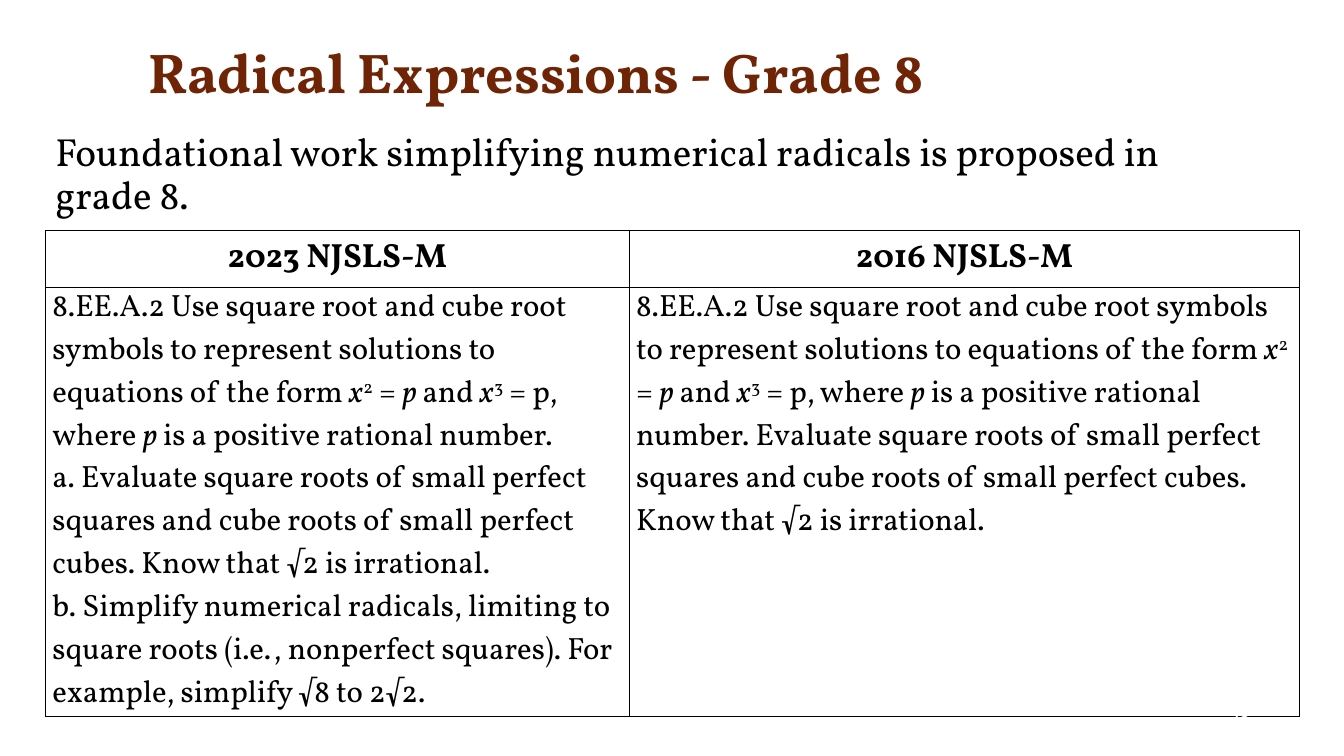
from lxml import etree
from pptx import Presentation
from pptx.dml.color import RGBColor
from pptx.enum.text import MSO_ANCHOR, PP_ALIGN
from pptx.oxml.ns import qn
from pptx.util import Inches, Pt

FONT = "Vollkorn"
BLACK, BROWN, WHITE = "000000", "6E2405", "FFFFFF"

TITLE = "Radical Expressions - Grade 8"
INTRO = "Foundational work simplifying numerical radicals is proposed in grade 8."
PAGE = "30"
HEADERS = ["2023 NJSLS-M", "2016 NJSLS-M"]

# Runs are (text, style): "" plain, "i" italic, "^" superscript
EQUATIONS = [
    ("8.EE.A.2 Use square root and cube root symbols to represent solutions"
     " to equations of the form ", ""),
    ("x", "i"), ("2", "^"), (" = ", ""), ("p", "i"), (" and ", ""),
    ("x", "i"), ("3", "^"), (" = p, where ", ""), ("p", "i"),
    (" is a positive rational number.", ""),
]
EVALUATE = ("Evaluate square roots of small perfect squares and cube roots of"
            " small perfect cubes. Know that √2 is irrational.")
SIMPLIFY = ("Simplify numerical radicals, limiting to square roots (i.e.,"
            " nonperfect squares). For example, simplify √8 to 2√2.")
STANDARDS = [
    [EQUATIONS, [("a. " + EVALUATE, "")], [("b. " + SIMPLIFY, "")]],
    [EQUATIONS + [(" " + EVALUATE, "")]],
]
COLUMNS = [5.79, 6.65]
ROWS = [0.56, 4.26]


def rgb(code):
    return RGBColor.from_string(code)


def set_frame(tf, margins, anchor):
    names = ("margin_left", "margin_top", "margin_right", "margin_bottom")
    for name, value in zip(names, margins):
        setattr(tf, name, Inches(value))
    tf.word_wrap = True
    tf.vertical_anchor = anchor


def add_runs(p, runs, size, color=BLACK, bold=False, **layout):
    for name, value in layout.items():
        setattr(p, name, value)
    for words, style in runs:
        r = p.add_run()
        r.text = words
        look = dict(name=FONT, size=Pt(size), bold=bold, italic=style == "i")
        for name, value in look.items():
            setattr(r.font, name, value)
        r.font.color.rgb = rgb(color)
        if style == "^":
            r.font._element.set("baseline", "30000")


def add_text(s, box, words, size, color, anchor=MSO_ANCHOR.MIDDLE,
             margins=(0.1, 0.05, 0.1, 0.05), **options):
    tf = s.shapes.add_textbox(*map(Inches, box)).text_frame
    set_frame(tf, margins, anchor)
    add_runs(tf.paragraphs[0], [(words, "")], size, color, **options)


def add_borders(cell):
    tc_pr = cell._tc.get_or_add_tcPr()
    for i, side in enumerate(("a:lnL", "a:lnR", "a:lnT", "a:lnB")):
        ln = etree.Element(qn(side), w=str(Pt(1)))
        fill = etree.SubElement(ln, qn("a:solidFill"))
        etree.SubElement(fill, qn("a:srgbClr"), val=BLACK)
        tc_pr.insert(i, ln)


def fill_cell(cell, paragraphs, size, anchor, **options):
    cell.fill.background()
    add_borders(cell)
    set_frame(cell.text_frame, (0, 0, 0, 0), anchor)
    cell.vertical_anchor = anchor
    cell.margin_left = cell.margin_right = Inches(0.07)
    cell.margin_top = cell.margin_bottom = 0
    tf = cell.text_frame
    for i, runs in enumerate(paragraphs):
        p = tf.add_paragraph() if i else tf.paragraphs[0]
        add_runs(p, runs, size, **options)


def main():
    prs = Presentation()
    prs.slide_width, prs.slide_height = Inches(13.33), Inches(7.5)
    s = prs.slides.add_slide(prs.slide_layouts[6])

    add_text(s, (1.37, 0.26, 11.96, 0.98), TITLE, 40, BROWN,
             bold=True, line_spacing=0.9)
    add_text(s, (0.45, 1.16, 12.26, 0.98), INTRO, 28, BLACK, MSO_ANCHOR.TOP,
             (0.1, 0.15, 0.3, 0.05), line_spacing=0.92)

    table = s.shapes.add_table(
        len(ROWS), len(COLUMNS), Inches(0.45), Inches(2.29),
        Inches(sum(COLUMNS)), Inches(sum(ROWS))).table
    for row, height in zip(table.rows, ROWS):
        row.height = Inches(height)
    for c, width in enumerate(COLUMNS):
        table.columns[c].width = Inches(width)
        fill_cell(table.cell(0, c), [[(HEADERS[c], "")]], 24,
                  MSO_ANCHOR.MIDDLE, bold=True, alignment=PP_ALIGN.CENTER)
        fill_cell(table.cell(1, c), STANDARDS[c], 22, MSO_ANCHOR.TOP)

    add_text(s, (9.5, 6.84, 3, 0.4), PAGE, 14, WHITE,
             alignment=PP_ALIGN.RIGHT)
    prs.save("out.pptx")


if __name__ == "__main__":
    main()
